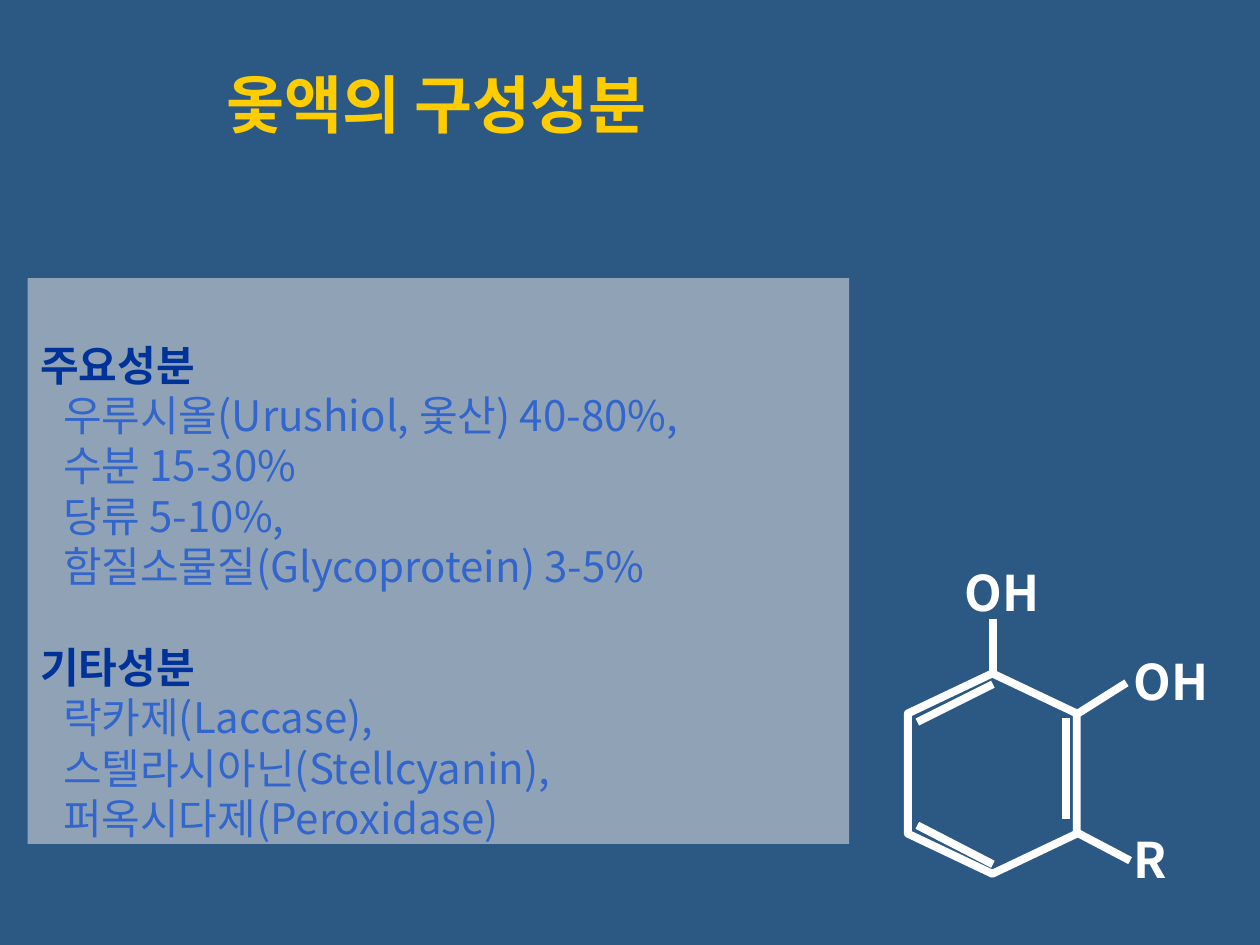
"""Build a slide on the components of lacquer sap with its urushiol ring."""
from typing import NamedTuple

from lxml.etree import SubElement
from pptx import Presentation
from pptx.dml.color import RGBColor
from pptx.enum.shapes import MSO_CONNECTOR, MSO_SHAPE
from pptx.enum.text import MSO_ANCHOR, MSO_AUTO_SIZE, PP_ALIGN
from pptx.oxml.ns import qn
from pptx.util import Pt

FONT = "Noto Sans CJK KR"
LEAD = 1.2
COLORS = {
    "back": "2C5884",
    "title": "FFCC00",
    "panel": "DDDDDD",
    "head": "003399",
    "item": "3366CC",
    "ring": "FFFFFF",
}


class Box(NamedTuple):
    left: float
    top: float
    width: float
    height: float


class Bond(NamedTuple):
    x1: float
    y1: float
    x2: float
    y2: float


class Label(NamedTuple):
    text: str
    left: float
    top: float


class Group(NamedTuple):
    head: str
    items: tuple[str, ...]


GROUPS = (
    Group("주요성분", (
        "우루시올(Urushiol, 옻산) 40-80%,",
        "수분 15-30%",
        "당류 5-10%,",
        "함질소물질(Glycoprotein) 3-5%",
    )),
    Group("기타성분", (
        "락카제(Laccase),",
        "스텔라시아닌(Stellcyanin),",
        "퍼옥시다제(Peroxidase)",
    )),
)
BONDS = (
    Bond(567.4, 353.5, 567.4, 385.2),
    Bond(609, 410.4, 609, 468),
    Bond(524.2, 412.6, 567.4, 391),
    Bond(567.4, 493.9, 524.2, 471.6),
    Bond(616.3, 407.5, 643.7, 390.2),
    Bond(645.8, 491.8, 615.6, 475.9),
)
LABELS = (
    Label("OH", 544.3, 315.4),
    Label("OH", 640.8, 366.5),
    Label("R", 640.8, 468),
)


def tint(name: str) -> RGBColor:
    return RGBColor.from_string(COLORS[name])


def place(shape, box: Box) -> None:
    shape.left, shape.top, shape.width, shape.height = map(Pt, box)


def setup(shape, inset: float = 6) -> None:
    frame = shape.text_frame
    frame.word_wrap = True
    frame.auto_size = MSO_AUTO_SIZE.NONE
    frame.vertical_anchor = MSO_ANCHOR.TOP
    frame.margin_left = frame.margin_right = Pt(7.2)
    frame.margin_top = Pt(inset)
    frame.margin_bottom = Pt(3.6)


def write(para, text: str, size: float, color: str, bold: bool = True,
          indent: float = 0, before: float = 0) -> None:
    props = para._p.get_or_add_pPr()
    props.set("marL", str(Pt(indent)))
    props.set("indent", "0")
    SubElement(props, qn("a:buNone"))
    para.text = text
    para.line_spacing = Pt(size * LEAD)
    para.space_before = Pt(before)
    font = para.font
    font.name, font.size, font.bold = FONT, Pt(size), bold
    font.color.rgb = tint(color)
    SubElement(props.find(qn("a:defRPr")), qn("a:ea"), typeface=FONT)


def fill_body(body) -> None:
    place(body, Box(15.8, 159, 469.4, 323.3))
    size = 24
    gap = size * LEAD
    setup(body, 6 + gap)
    body.fill.solid()
    body.fill.fore_color.rgb = tint("panel")
    shade = body._element.spPr.find(".//" + qn("a:srgbClr"))
    SubElement(shade, qn("a:alpha"), val="57000")
    frame = body.text_frame
    for index, group in enumerate(GROUPS):
        para = frame.add_paragraph() if index else frame.paragraphs[0]
        write(para, group.head, size, "head", before=gap if index else 0)
        for item in group.items:
            write(frame.add_paragraph(), item, size, "item", False, 13)


def stroke(shape) -> None:
    shape.line.color.rgb = tint("ring")
    shape.line.width = Pt(4.5)


def draw_ring(shapes) -> None:
    ring = shapes.add_shape(MSO_SHAPE.FLOWCHART_PREPARATION, 0, 0, 0, 0)
    place(ring, Box(509.8, 393.8, 114.5, 96.5))
    ring.rotation = 90
    ring.shadow.inherit = False
    ring.fill.background()
    stroke(ring)


def draw_bond(shapes, bond: Bond) -> None:
    line = shapes.add_connector(MSO_CONNECTOR.STRAIGHT, *map(Pt, bond))
    stroke(line)
    SubElement(line._element.spPr, qn("a:effectLst"))


def draw_label(shapes, label: Label) -> None:
    box = shapes.add_textbox(Pt(label.left), Pt(label.top), Pt(70.6), Pt(41))
    setup(box)
    write(box.text_frame.paragraphs[0], label.text, 28, "ring")


def main() -> None:
    deck = Presentation()
    deck.slide_width, deck.slide_height = Pt(720), Pt(540)
    slide = deck.slides.add_slide(deck.slide_layouts[1])
    slide.background.fill.solid()
    slide.background.fill.fore_color.rgb = tint("back")
    shapes = slide.shapes

    title = shapes.title
    place(title, Box(48.2, 31.7, 402.5, 79.2))
    setup(title)
    para = title.text_frame.paragraphs[0]
    write(para, "옻액의 구성성분", 36, "title")
    para.alignment = PP_ALIGN.CENTER

    fill_body(slide.placeholders[1])
    draw_ring(shapes)
    for bond in BONDS:
        draw_bond(shapes, bond)
    for label in LABELS:
        draw_label(shapes, label)
    deck.save("out.pptx")


if __name__ == "__main__":
    main()
